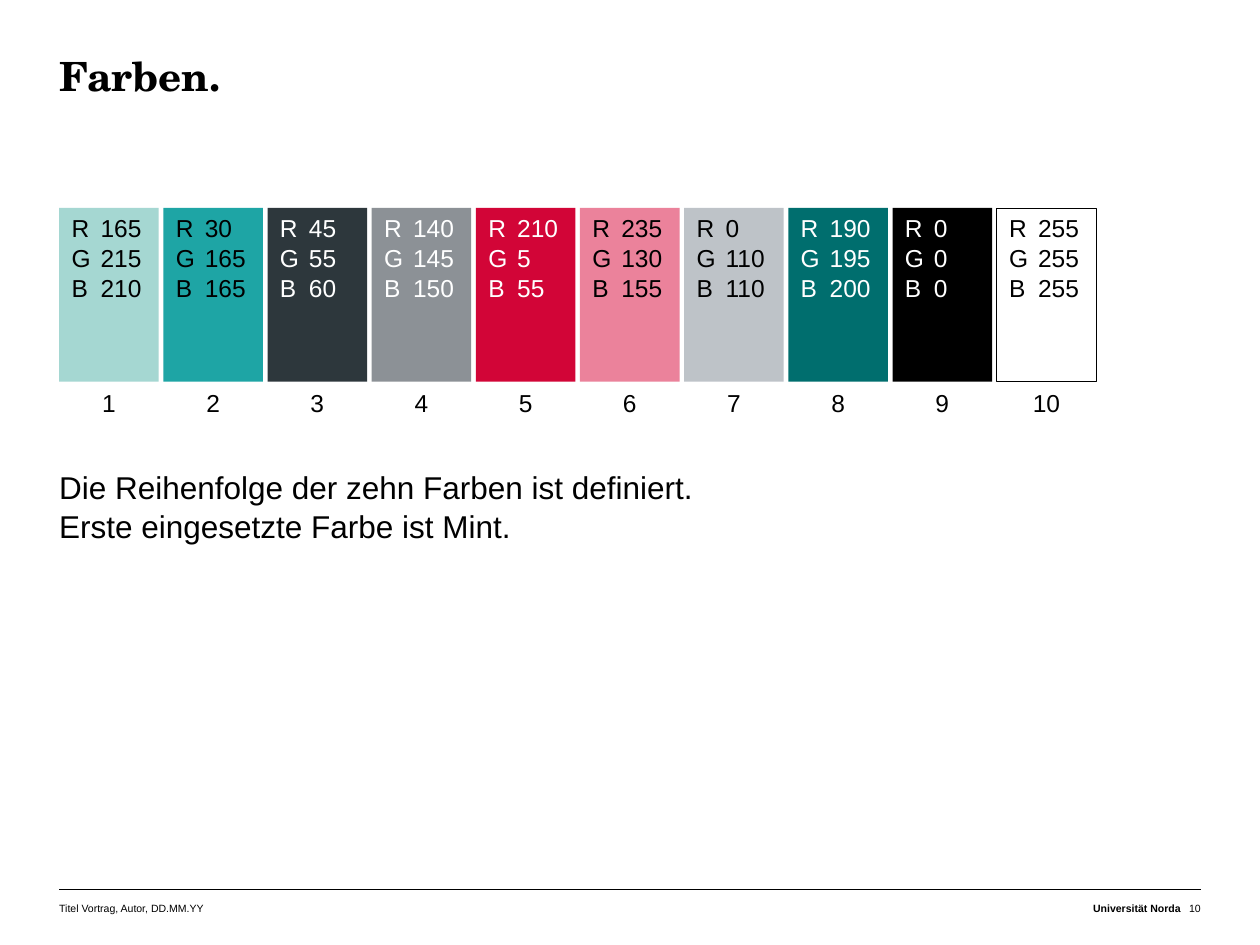
from lxml.etree import SubElement
from pptx import Presentation
from pptx.dml.color import RGBColor
from pptx.enum.shapes import MSO_CONNECTOR as Connector, MSO_SHAPE as Shape
from pptx.enum.text import MSO_ANCHOR as Anchor, PP_ALIGN as Align
from pptx.oxml.ns import qn
from pptx.util import Inches, Pt

BLACK = RGBColor(0x00, 0x00, 0x00)
WHITE = RGBColor(0xFF, 0xFF, 0xFF)
MINT = RGBColor(0xA5, 0xD7, 0xD2)
TURQUOISE = RGBColor(0x1E, 0xA5, 0xA5)
ANTHRACITE = RGBColor(0x2D, 0x37, 0x3C)
GREY = RGBColor(0x8C, 0x91, 0x96)
RED = RGBColor(0xD2, 0x05, 0x37)
ROSE = RGBColor(0xEB, 0x82, 0x9B)
LIGHT_GREY = RGBColor(0xBE, 0xC3, 0xC8)
PETROL = RGBColor(0x00, 0x6E, 0x6E)

SANS = "Arial"
SERIF = "TeX Gyre Schola"

# Fill, text colour and the R, G, B values printed on each swatch
SWATCHES = [
    (MINT, BLACK, (165, 215, 210)),
    (TURQUOISE, BLACK, (30, 165, 165)),
    (ANTHRACITE, WHITE, (45, 55, 60)),
    (GREY, WHITE, (140, 145, 150)),
    (RED, WHITE, (210, 5, 55)),
    (ROSE, BLACK, (235, 130, 155)),
    (LIGHT_GREY, BLACK, (0, 110, 110)),
    (PETROL, WHITE, (190, 195, 200)),
    (BLACK, WHITE, (0, 0, 0)),
    (WHITE, BLACK, (255, 255, 255)),
]


def write_text(shape, lines, size, font=SANS, color=BLACK, bold=False,
               align=Align.LEFT, spacing=None, insets=(0, 0, 0, 0), tab=None):
    """Fill a shape with one paragraph per line; insets run left, top, right, bottom."""
    frame = shape.text_frame
    frame.word_wrap = True
    frame.vertical_anchor = Anchor.TOP
    (frame.margin_left, frame.margin_top,
     frame.margin_right, frame.margin_bottom) = map(Inches, insets)
    for index, line in enumerate(lines):
        paragraph = frame.add_paragraph() if index else frame.paragraphs[0]
        paragraph.alignment = align
        if spacing:
            paragraph.line_spacing = Pt(spacing)
        if tab:
            properties = paragraph._p.get_or_add_pPr()
            tab_list = SubElement(properties, qn("a:tabLst"))
            SubElement(tab_list, qn("a:tab"), pos=str(Inches(tab)), algn="l")
        run = paragraph.add_run()
        run.text = line
        run.font.name = font
        run.font.size = Pt(size)
        run.font.bold = bold
        run.font.color.rgb = color


def add_text(shapes, left, top, width, height, lines, size, **text_format):
    box = shapes.add_textbox(Inches(left), Inches(top), Inches(width), Inches(height))
    write_text(box, lines, size, **text_format)


def add_swatch(slide, left, top, width, height, number, fill, text_color, values):
    label_height = 0.34
    swatch_height = height - label_height
    group = slide.shapes.add_group_shape()

    # Coloured field with its RGB values
    field = group.shapes.add_shape(Shape.RECTANGLE, Inches(left), Inches(top),
                                   Inches(width), Inches(swatch_height))
    field.shadow.inherit = False
    field.fill.solid()
    field.fill.fore_color.rgb = fill
    if fill == WHITE:
        field.line.color.rgb = BLACK
        field.line.width = Pt(0.25)
    else:
        field.line.fill.background()
    lines = [f"{channel}\t{value}" for channel, value in zip("RGB", values)]
    write_text(field, lines, 14, color=text_color, spacing=17,
               insets=(0.1, 0.04, 0, 0), tab=0.23)

    # Number below the field
    add_text(group.shapes, left, top + swatch_height, width, label_height, [str(number)],
             14, align=Align.CENTER, spacing=17, insets=(0.1, 0.05, 0.1, 0.05))


def add_palette(slide, left, top, width, height):
    swatch_width = 0.79
    pitch = (width - swatch_width) / (len(SWATCHES) - 1)
    for index, swatch in enumerate(SWATCHES):
        add_swatch(slide, left + index * pitch, top, swatch_width, height,
                   index + 1, *swatch)


def add_footer(slide, left, top, width, height):
    # Rule above the footer
    rule = slide.shapes.add_connector(Connector.STRAIGHT, Inches(left), Inches(top),
                                      Inches(left + width), Inches(top))
    rule.line.color.rgb = BLACK
    rule.line.width = Pt(0.25)
    SubElement(rule._element.spPr, qn("a:effectLst"))

    # Talk details, institution and page number
    text_height, number_width, name_width = 0.2, 0.16, 2.09
    text_top = top + height - text_height
    number_left = left + width - number_width
    insets = (0, 0.02, 0, 0)
    add_text(slide.shapes, left, text_top, 2.36, text_height,
             ["Titel Vortrag, Autor, DD.MM.YY"], 6, insets=insets)
    add_text(slide.shapes, number_left - name_width, text_top, name_width, text_height,
             ["Universität Norda"], 6, bold=True, align=Align.RIGHT, insets=insets)
    add_text(slide.shapes, number_left, text_top, number_width, text_height,
             ["10"], 6, align=Align.RIGHT, insets=insets)


def main():
    presentation = Presentation()
    presentation.slide_width = Inches(10)
    presentation.slide_height = Inches(7.5)
    slide = presentation.slides.add_slide(presentation.slide_layouts[6])

    margin = 0.47
    content_width = 10 - 2 * margin
    palette_width = 8.23

    add_footer(slide, margin, 7.06, content_width, 0.28)
    # Title
    add_text(slide.shapes, margin, 0.44, content_width, 0.83, ["Farben."], 23,
             font=SERIF, bold=True, spacing=25)
    add_palette(slide, margin, 1.65, palette_width, 1.72)
    # Explanation
    add_text(slide.shapes, margin, 3.71, palette_width, 0.71,
             ["Die Reihenfolge der zehn Farben ist definiert.",
              "Erste eingesetzte Farbe ist Mint."], 18, spacing=22)

    presentation.save("out.pptx")


if __name__ == "__main__":
    main()
